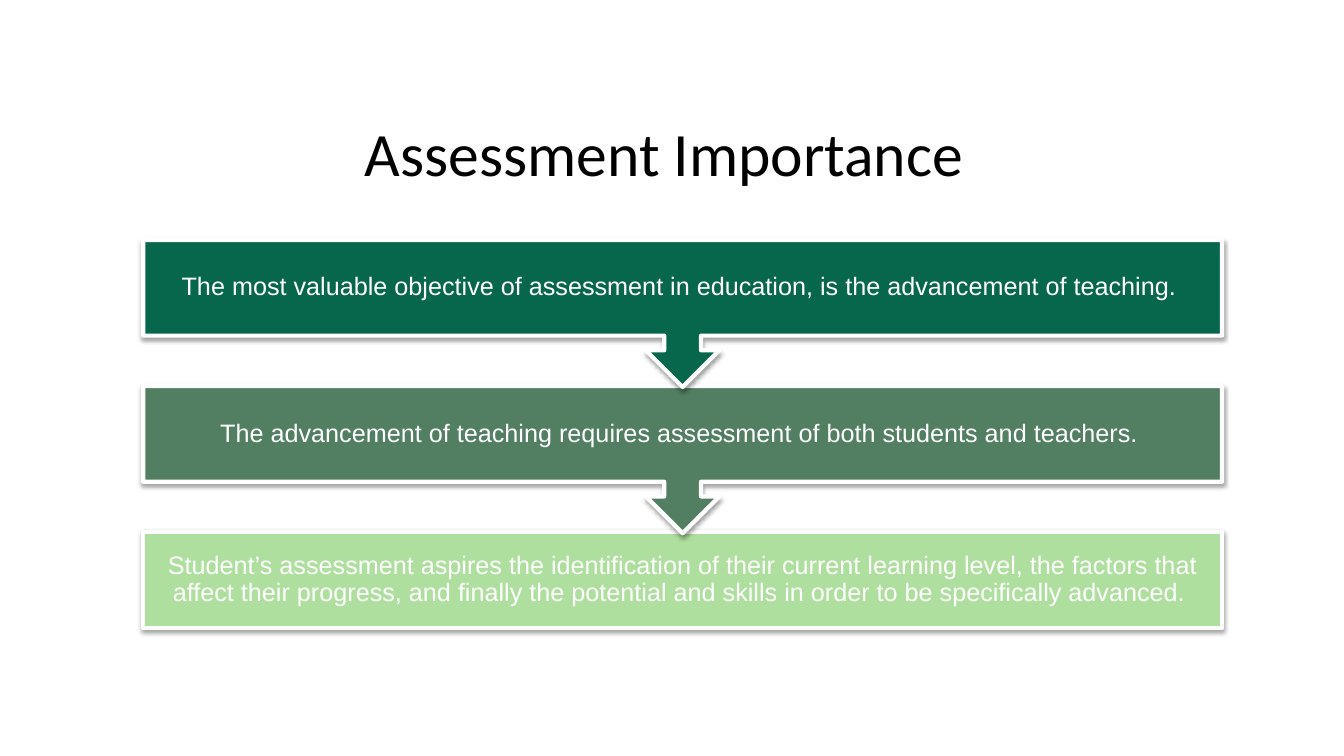
from lxml.etree import SubElement
from pptx import Presentation
from pptx.dml.color import RGBColor
from pptx.enum.shapes import MSO_SHAPE
from pptx.enum.text import MSO_ANCHOR, PP_ALIGN
from pptx.oxml.ns import qn
from pptx.util import Inches, Pt

TITLE = "Assessment Importance "
STEPS = [
    ("The most valuable objective of assessment in education, is the advancement of teaching. ", "forest"),
    ("The advancement of teaching requires assessment of both students and teachers. ", "sage"),
    ("Student’s assessment aspires the identification of their current learning level, the factors that "
     "affect their progress, and finally the potential and skills in order to be specifically advanced. ", "mint"),
]
COLORS = {"forest": "07674D", "sage": "527F62", "mint": "AFDF9F", "white": "FFFFFF", "black": "000000"}
LEFT, TOP, WIDTH = 1.42, 2.38, 10.7
ROW_PITCH, BAND_HEIGHT, CALLOUT_HEIGHT = 1.45, 0.95, 1.46
CALLOUT_ADJUSTMENTS = (0.25, 0.25, 0.25, 0.65)


def color(name):
    return RGBColor.from_string(COLORS[name])


def write(frame, text, font_name, size, font_color, margins):
    frame.word_wrap = True
    frame.vertical_anchor = MSO_ANCHOR.MIDDLE
    frame.margin_left = frame.margin_right = Inches(margins[0])
    frame.margin_top = frame.margin_bottom = Inches(margins[1])
    para = frame.paragraphs[0]
    para.text = text
    para.alignment = PP_ALIGN.CENTER
    para.line_spacing = 0.9
    para.space_before = Pt(0)
    para.font.name = font_name
    para.font.size = Pt(size)
    para.font.color.rgb = color(font_color)


def add_shadow(shape):
    shape.shadow.inherit = False
    effects = shape._element.spPr.find(qn("a:effectLst"))
    shadow = SubElement(effects, qn("a:outerShdw"), blurRad=str(Pt(3.1)), dist=str(Pt(1.6)),
                        dir=str(90 * 60000), rotWithShape="0")
    tint = SubElement(shadow, qn("a:srgbClr"), val=COLORS["black"])
    SubElement(tint, qn("a:alpha"), val="37000")


def add_step(page, row, text, fill, is_last):
    left, top, width = Inches(LEFT), Inches(TOP + row * ROW_PITCH), Inches(WIDTH)
    kind = MSO_SHAPE.RECTANGLE if is_last else MSO_SHAPE.UP_ARROW_CALLOUT
    height = BAND_HEIGHT if is_last else CALLOUT_HEIGHT
    band = page.shapes.add_shape(kind, left, top, width, Inches(height))
    if not is_last:
        band.rotation = 180
        for index, value in enumerate(CALLOUT_ADJUSTMENTS):
            band.adjustments[index] = value
    band.fill.solid()
    band.fill.fore_color.rgb = color(fill)
    band.line.color.rgb = color("white")
    band.line.width = Pt(3)
    add_shadow(band)
    label = page.shapes.add_textbox(left, top, width, Inches(BAND_HEIGHT))
    write(label.text_frame, text, "Arial", 18, "white", (0.14, 0.14))


def main():
    deck = Presentation()
    deck.slide_width, deck.slide_height = Inches(13.33), Inches(7.5)
    page = deck.slides.add_slide(deck.slide_layouts[5])
    title = page.shapes.title
    title.left, title.top, title.width, title.height = map(Inches, (0.91, 0.91, 11.5, 1.29))
    write(title.text_frame, TITLE, "Calibri", 44, "black", (0.1, 0.05))
    last = len(STEPS) - 1
    for row, (text, fill) in reversed(list(enumerate(STEPS))):
        add_step(page, row, text, fill, row == last)
    deck.save("out.pptx")


if __name__ == "__main__":
    main()
